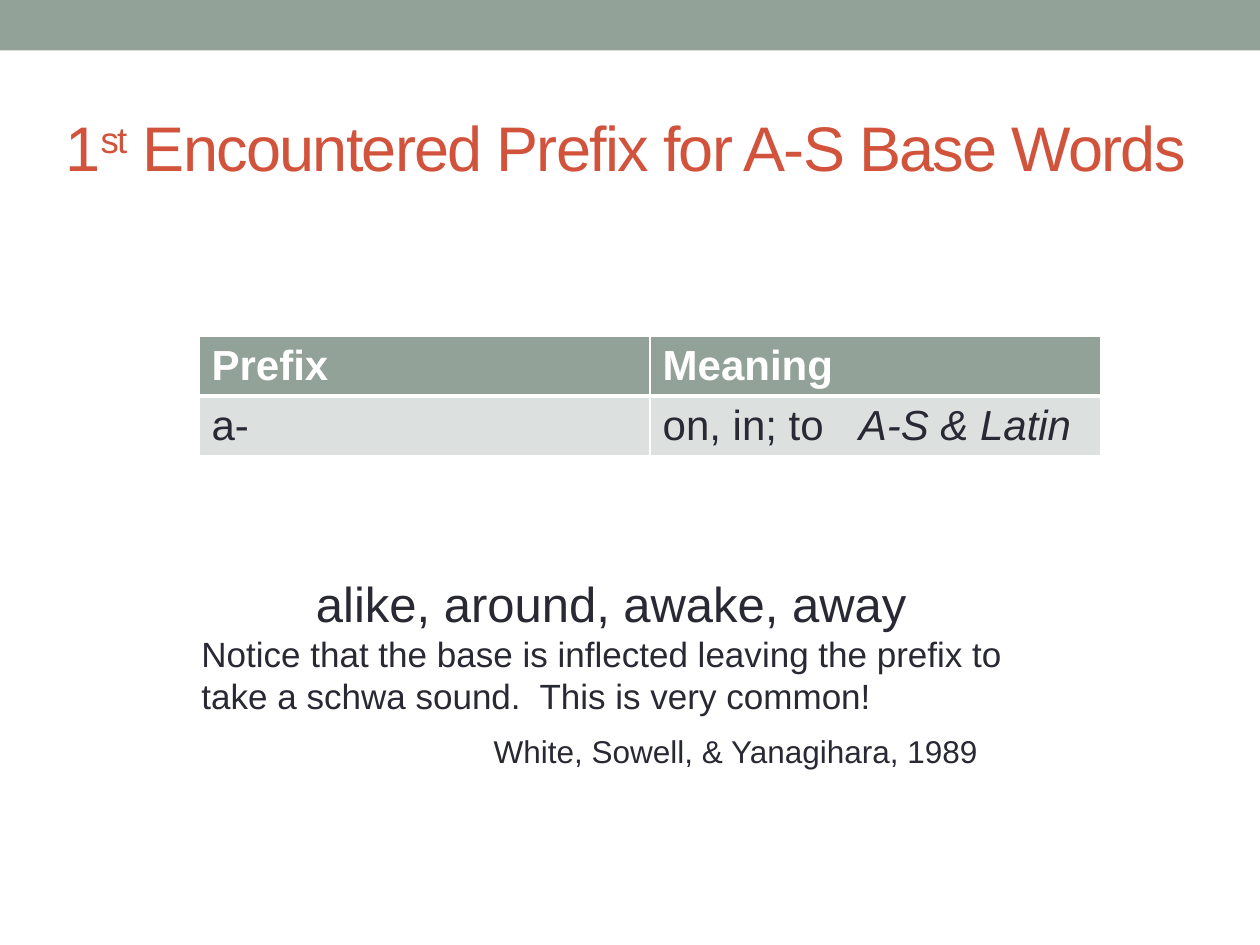
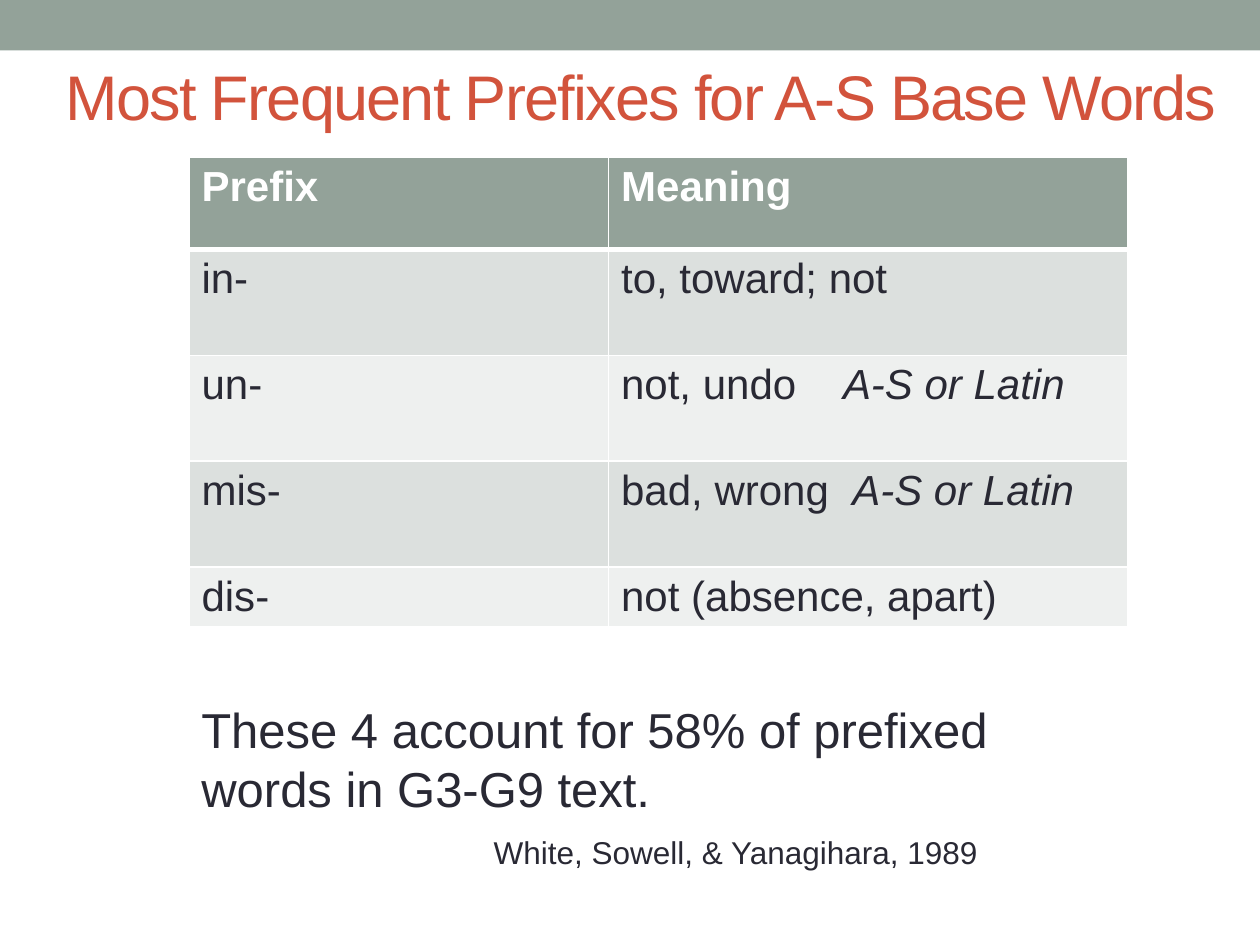
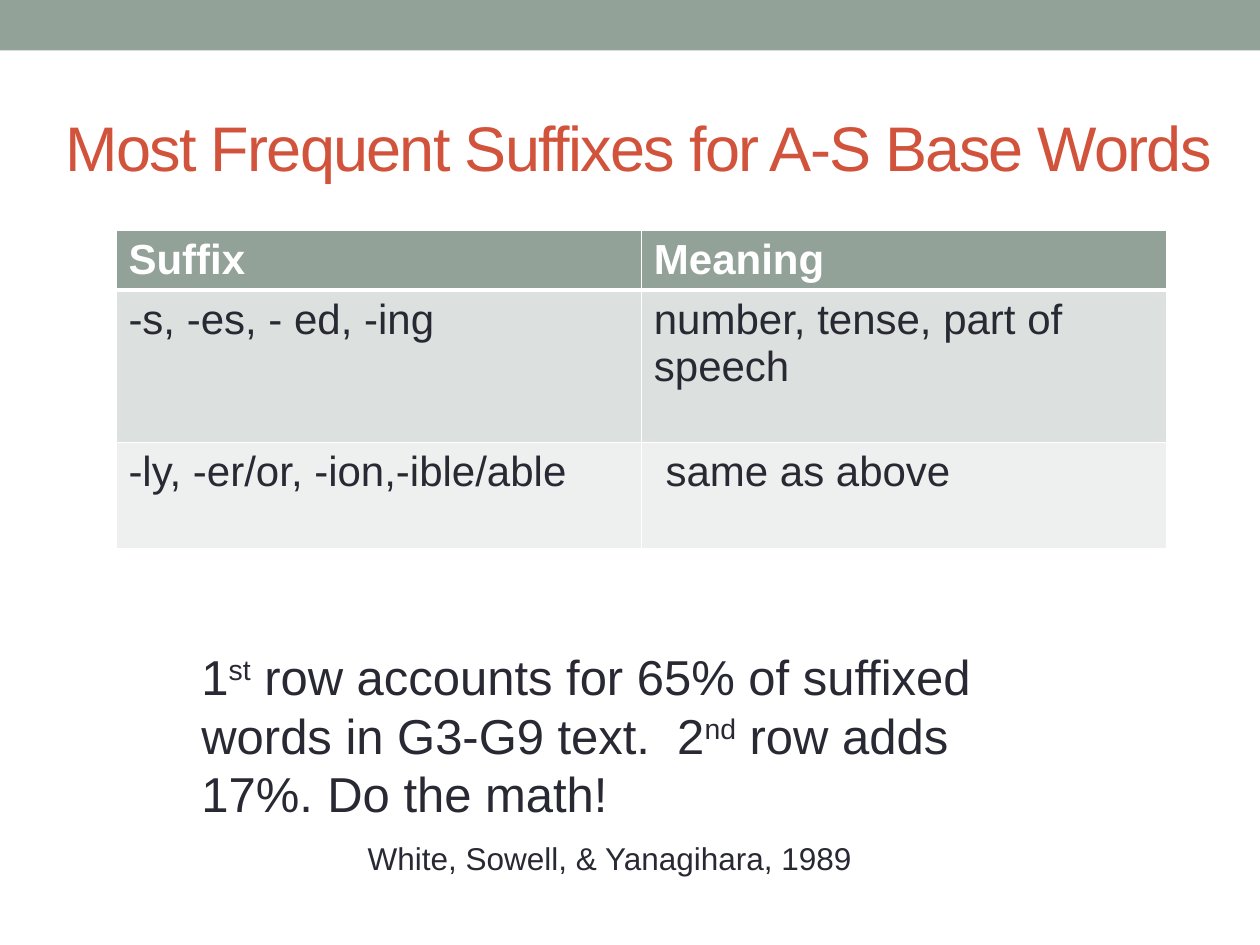
from lxml import etree
from pptx import Presentation
from pptx.dml.color import RGBColor
from pptx.enum import shapes, text
from pptx.oxml.ns import qn
from pptx.util import Inches, Pt

FONT = "Arial"
COLORS = {
    "sage": "93A299",
    "title": "D2533C",
    "ink": "292934",
    "white": "FFFFFF",
    "odd_row": "DCE0DE",
    "even_row": "EEF0EF",
}
CITATION = "White, Sowell, & Yanagihara, 1989"
TITLE_ONLY = 5
SLIDE_WIDTH = 10


def color(name):
    return RGBColor.from_string(COLORS[name])


def write(paragraph, content, size, color_name="ink", bold=False, tracking=None):
    """Fill a paragraph from a string or a list of strings and (text, style) pairs."""
    font = paragraph.font
    font.name, font.size, font.bold = FONT, Pt(size), bold
    font.color.rgb = color(color_name)
    for part in [content] if isinstance(content, str) else content:
        words, style = (part, None) if isinstance(part, str) else part
        run = paragraph.add_run()
        run.text = words
        if style == "italic":
            run.font.italic = True
        if style == "superscript":
            run._r.get_or_add_rPr().set("baseline", "30000")
        if tracking is not None:
            run._r.get_or_add_rPr().set("spc", str(tracking * 100))


def set_margins(paragraph, left=0, right=0):
    properties = paragraph._p.get_or_add_pPr()
    properties.set("marL", str(Inches(left)))
    properties.set("marR", str(Inches(right)))


def add_titled_slide(deck, title, top):
    slide = deck.slides.add_slide(deck.slide_layouts[TITLE_ONLY])
    band = slide.shapes.add_shape(
        shapes.MSO_SHAPE.RECTANGLE, 0, 0, Inches(SLIDE_WIDTH), Inches(0.4))
    band.shadow.inherit = False
    band.fill.solid()
    band.fill.fore_color.rgb = color("sage")
    band.line.fill.background()

    heading = slide.shapes.title
    heading.left, heading.top = Inches(0.42), Inches(top)
    heading.width, heading.height = Inches(9.83), Inches(1.17)
    frame = heading.text_frame
    frame.word_wrap = True
    frame.auto_size = text.MSO_AUTO_SIZE.NONE
    frame.vertical_anchor = text.MSO_ANCHOR.MIDDLE
    paragraph = frame.paragraphs[0]
    paragraph.alignment = text.PP_ALIGN.LEFT
    write(paragraph, title, 36, "title", tracking=-1)
    return slide


def set_borders(cell, top, bottom):
    """Draw white cell edges; top and bottom are widths in points."""
    properties = cell._tc.get_or_add_tcPr()
    edges = {"a:lnL": 1, "a:lnR": 1, "a:lnT": top, "a:lnB": bottom}
    for position, (tag, width) in enumerate(edges.items()):
        line = etree.Element(qn(tag), w=str(Pt(width)))
        fill = etree.SubElement(line, qn("a:solidFill"))
        etree.SubElement(fill, qn("a:srgbClr"), val=COLORS["white"])
        properties.insert(position, line)


def add_affix_table(slide, left, top, widths, heights, rows):
    table = slide.shapes.add_table(
        len(rows), len(widths), Inches(left), Inches(top),
        Inches(sum(widths)), Inches(sum(heights))).table
    for column, width in zip(table.columns, widths):
        column.width = Inches(width)
    for index, (row, height, entries) in enumerate(zip(table.rows, heights, rows)):
        row.height = Inches(height)
        header = index == 0
        fill = "sage" if header else "odd_row" if index % 2 else "even_row"
        for cell, entry in zip(row.cells, entries):
            cell.fill.solid()
            cell.fill.fore_color.rgb = color(fill)
            set_borders(cell, top=3 if index == 1 else 1, bottom=3 if header else 1)
            write(cell.text_frame.paragraphs[0], entry, 24,
                  "white" if header else "ink", bold=header)


def add_remarks(slide, top, height, citation_indent):
    """Add the text area, ending in the citation; return its first paragraph."""
    frame = slide.shapes.add_textbox(
        Inches(1.5), Inches(top), Inches(6.92), Inches(height)).text_frame
    frame.word_wrap = True
    citation = frame.add_paragraph()
    citation.space_before = Pt(9)
    set_margins(citation, left=citation_indent)
    write(citation, CITATION, 18)
    return frame.paragraphs[0]


def build_first_prefix(deck):
    slide = add_titled_slide(
        deck, ["1", ("st", "superscript"), " Encountered Prefix for A-S Base Words"], 0.58)
    add_affix_table(slide, 1.58, 2.67, [3.58, 3.58], [0.47, 0.47], [
        ["Prefix", "Meaning"],
        ["a-", ["on, in; to   ", ("A-S & Latin", "italic")]],
    ])
    examples = add_remarks(slide, 4.5, 1.72, 2.32)
    examples.alignment = text.PP_ALIGN.CENTER
    set_margins(examples, right=0.22)
    write(examples, "alike, around, awake, away", 28)
    notice = slide.shapes[-1].text_frame.add_paragraph()
    write(notice, "Notice that the base is inflected leaving the prefix to "
                  "take a schwa sound.  This is very common!", 20)
    examples._p.addnext(notice._p)


def build_frequent_prefixes(deck):
    slide = add_titled_slide(deck, "Most Frequent Prefixes for A-S Base Words", 0.17)
    add_affix_table(slide, 1.5, 1.25, [3.33, 4.12], [0.73] + [0.84] * 3 + [0.47], [
        ["Prefix", "Meaning"],
        ["in-", "to, toward; not"],
        ["un-", ["not, undo    ", ("A-S or Latin", "italic")]],
        ["mis-", ["bad, wrong  ", ("A-S or Latin", "italic")]],
        ["dis-", "not (absence, apart)"],
    ])
    write(add_remarks(slide, 5.5, 1.51, 2.32),
          "These 4 account for 58% of prefixed words in G3-G9 text.", 28)


def build_frequent_suffixes(deck):
    slide = add_titled_slide(deck, "Most Frequent Suffixes for A-S Base Words", 0.58)
    add_affix_table(slide, 0.92, 1.83, [4.17, 4.17], [0.47, 1.21, 0.84], [
        ["Suffix", "Meaning"],
        ["-s, -es, - ed, -ing", "number, tense, part of speech"],
        ["-ly, -er/or, -ion,-ible/able", " same as above"],
    ])
    write(add_remarks(slide, 5.08, 1.99, 1.32), [
        "1", ("st", "superscript"),
        " row accounts for 65% of suffixed words in G3-G9 text.  2",
        ("nd", "superscript"), " row adds 17%.\tDo the math!",
    ], 28)


def main():
    deck = Presentation()
    deck.slide_width, deck.slide_height = Inches(SLIDE_WIDTH), Inches(7.5)
    build_first_prefix(deck)
    build_frequent_prefixes(deck)
    build_frequent_suffixes(deck)
    deck.save("out.pptx")


if __name__ == "__main__":
    main()
